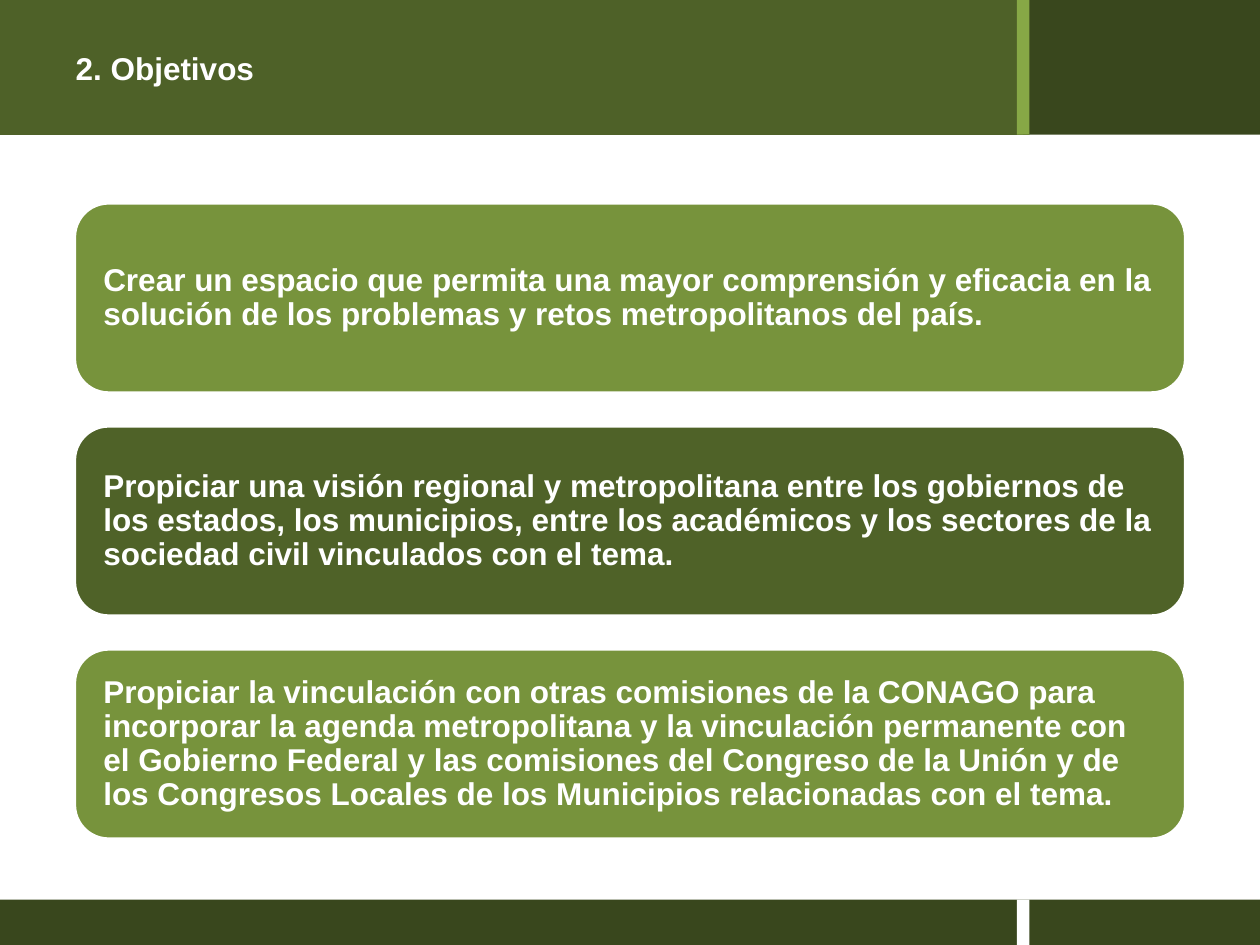
import pptx
import pptx.util
import pptx.dml.color
import pptx.enum.shapes
import pptx.enum.text
from dataclasses import dataclass

TITLE = "2. Objetivos"
OBJECTIVES = [
    "Crear un espacio que permita una mayor comprensión y eficacia en la "
    "solución de los problemas y retos metropolitanos del país.",
    "Propiciar una visión regional y metropolitana entre los gobiernos de "
    "los estados, los municipios, entre los académicos y los sectores de la "
    "sociedad civil vinculados con el tema.",
    "Propiciar la vinculación con otras comisiones de la CONAGO para "
    "incorporar la agenda metropolitana y la vinculación permanente con "
    "el Gobierno Federal y las comisiones del Congreso de la Unión y de "
    "los Congresos Locales de los Municipios relacionadas con el tema.",
]


@dataclass(frozen=True)
class Theme:
    font: str = "Arial"
    text_size: int = 18
    outline: int = 2
    white: str = "FFFFFF"
    header: str = "4E6128"
    dark: str = "39471D"
    accent: str = "87A846"
    cards: tuple = ("77933C", "4F6228")


THEME = Theme()
WIDTH, HEIGHT = 10, 7.5
HEADER_HEIGHT = 1.07
FOOTER_TOP = 7.14
FOOTER_HEIGHT = HEIGHT - FOOTER_TOP
STRIPE_LEFT, STRIPE_WIDTH = 8.07, 0.1
CORNER_LEFT = 8.12
MARGIN = 0.59
CARD_TOP, CARD_HEIGHT, CARD_PITCH = 1.61, 1.51, 1.77
CARD_ROUNDING = 0.18

RECTANGLE = pptx.enum.shapes.MSO_SHAPE.RECTANGLE
ROUNDED = pptx.enum.shapes.MSO_SHAPE.ROUNDED_RECTANGLE


def paint(shape, color):
    shape.fill.solid()
    shape.fill.fore_color.rgb = pptx.dml.color.RGBColor.from_string(color)


def add_block(slide, kind, box, color, outline=None):
    shape = slide.shapes.add_shape(kind, *map(pptx.util.Inches, box))
    shape.shadow.inherit = False
    paint(shape, color)
    if outline:
        shape.line.color.rgb = pptx.dml.color.RGBColor.from_string(outline)
        shape.line.width = pptx.util.Pt(THEME.outline)
    else:
        shape.line.fill.background()
    return shape


def write_text(shape, text, side_margin, line_spacing=1.0, space_after=0):
    frame = shape.text_frame
    frame.word_wrap = True
    frame.auto_size = pptx.enum.text.MSO_AUTO_SIZE.NONE
    frame.vertical_anchor = pptx.enum.text.MSO_ANCHOR.MIDDLE
    frame.margin_left = frame.margin_right = pptx.util.Inches(side_margin)
    frame.margin_top = frame.margin_bottom = 0
    paragraph = frame.paragraphs[0]
    paragraph.text = text
    paragraph.alignment = pptx.enum.text.PP_ALIGN.LEFT
    paragraph.line_spacing = line_spacing
    paragraph.space_before = pptx.util.Pt(0)
    paragraph.space_after = pptx.util.Pt(space_after)
    font = paragraph.runs[0].font
    font.name, font.size, font.bold = THEME.font, pptx.util.Pt(THEME.text_size), True
    font.color.rgb = pptx.dml.color.RGBColor.from_string(THEME.white)


def add_header(slide):
    title = slide.shapes.title
    title.left = title.top = 0
    title.width = pptx.util.Inches(STRIPE_LEFT + STRIPE_WIDTH)
    title.height = pptx.util.Inches(HEADER_HEIGHT)
    paint(title, THEME.header)
    write_text(title, TITLE, side_margin=0.6)


def add_bands(slide):
    bands = [
        ((0, FOOTER_TOP, WIDTH, FOOTER_HEIGHT), THEME.dark),
        ((CORNER_LEFT, 0, WIDTH - CORNER_LEFT, HEADER_HEIGHT), THEME.dark),
        ((STRIPE_LEFT, 0, STRIPE_WIDTH, HEADER_HEIGHT), THEME.accent),
        ((STRIPE_LEFT, FOOTER_TOP, STRIPE_WIDTH, FOOTER_HEIGHT), THEME.white),
    ]
    for box, color in bands:
        add_block(slide, RECTANGLE, box, color)


def add_objectives(slide):
    for row, text in enumerate(OBJECTIVES):
        box = (MARGIN, CARD_TOP + row * CARD_PITCH, WIDTH - 2 * MARGIN, CARD_HEIGHT)
        color = THEME.cards[row % len(THEME.cards)]
        card = add_block(slide, ROUNDED, box, color, outline=THEME.white)
        card.adjustments[0] = CARD_ROUNDING
        write_text(card, text, side_margin=0.15, line_spacing=0.9, space_after=6)


def main():
    presentation = pptx.Presentation()
    presentation.slide_width = pptx.util.Inches(WIDTH)
    presentation.slide_height = pptx.util.Inches(HEIGHT)
    slide = presentation.slides.add_slide(presentation.slide_layouts.get_by_name("Title Only"))
    add_header(slide)
    add_bands(slide)
    add_objectives(slide)
    presentation.save("out.pptx")


if __name__ == "__main__":
    main()
